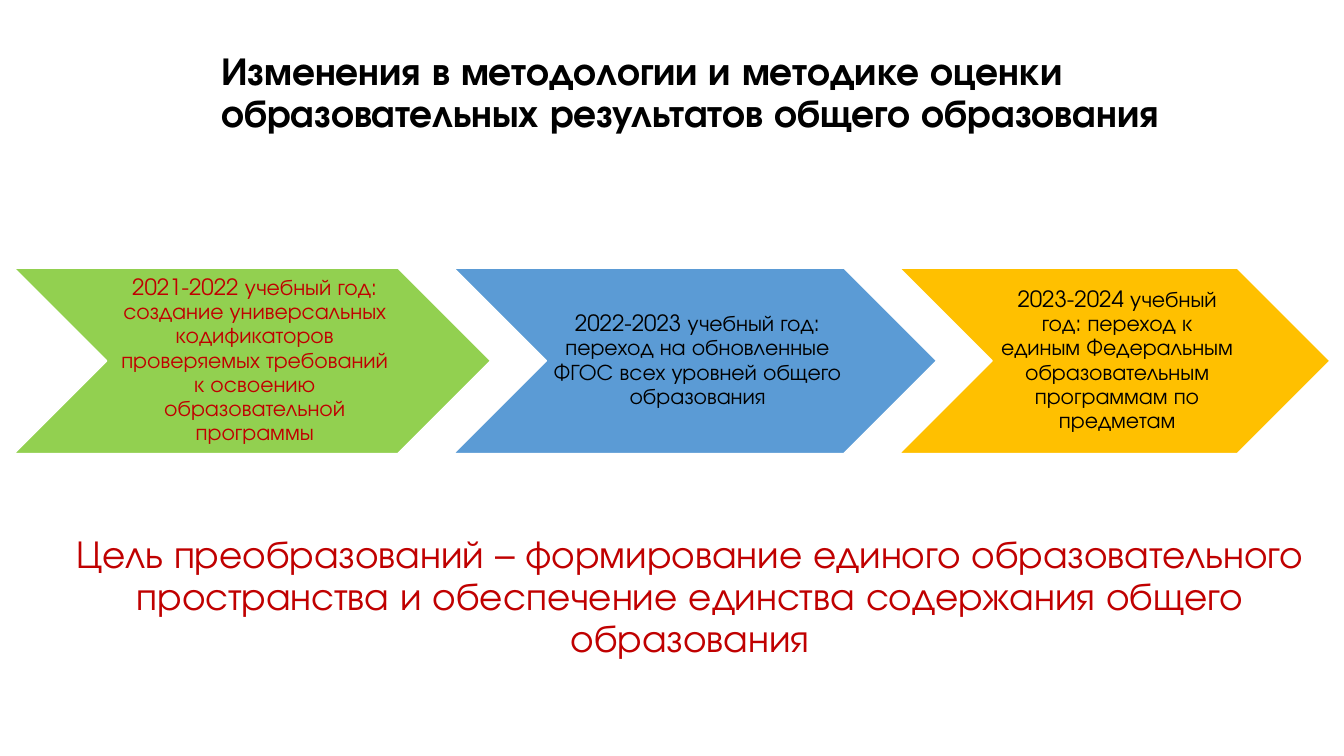
from dataclasses import dataclass

from pptx import Presentation
from pptx.dml.color import RGBColor
from pptx.enum import shapes, text
from pptx.shapes.autoshape import Shape
from pptx.slide import Slide
from pptx.text.text import TextFrame
from pptx.util import Pt


@dataclass(frozen=True)
class Theme:
    font: str = "TeX Gyre Adventor"
    heading_size: float = 28
    stage_size: float = 16
    line_spacing: float = 0.9
    black: str = "000000"
    white: str = "FFFFFF"
    red: str = "C00000"
    green: str = "92D050"
    blue: str = "5B9BD5"
    amber: str = "FFC000"


@dataclass(frozen=True)
class Stage:
    wording: str
    width: float
    fill: str
    color: str


THEME = Theme()
STAGE_LEFT, STAGE_TOP = 10, 191.5
STAGE_HEIGHT, STAGE_OVERLAP = 132.5, 26.5

TITLE = "Изменения в методологии и методике оценки образовательных результатов общего образования"
GOAL = (
    "Цель преобразований – формирование единого образовательного пространства "
    "и обеспечение единства содержания общего образования"
)
STAGES = [
    Stage(
        "2021-2022 учебный год: создание универсальных кодификаторов "
        "проверяемых требований к освоению образовательной программы",
        340.5, THEME.green, THEME.red,
    ),
    Stage(
        "2022-2023 учебный год: переход на обновленные ФГОС всех уровней общего образования",
        345, THEME.blue, THEME.black,
    ),
    Stage(
        "2023-2024 учебный год: переход к единым Федеральным образовательным программам по предметам",
        307.5, THEME.amber, THEME.black,
    ),
]


def write_text(
    frame: TextFrame,
    wording: str,
    size: float,
    color: str,
    alignment: text.PP_ALIGN = text.PP_ALIGN.CENTER,
    anchor: text.MSO_ANCHOR = text.MSO_ANCHOR.MIDDLE,
    bold: bool = False,
) -> None:
    frame.text = wording
    frame.word_wrap = True
    frame.vertical_anchor = anchor
    paragraph = frame.paragraphs[0]
    paragraph.alignment = alignment
    paragraph.line_spacing = THEME.line_spacing
    font = paragraph.runs[0].font
    font.name = THEME.font
    font.size = Pt(size)
    font.bold = bold
    font.color.rgb = RGBColor.from_string(color)


def add_text_box(slide: Slide, left: float, top: float, width: float, height: float) -> TextFrame:
    return slide.shapes.add_textbox(Pt(left), Pt(top), Pt(width), Pt(height)).text_frame


def add_stage(slide: Slide, stage: Stage, left: float) -> Shape:
    shape = slide.shapes.add_shape(
        shapes.MSO_SHAPE.CHEVRON, Pt(left), Pt(STAGE_TOP), Pt(stage.width), Pt(STAGE_HEIGHT)
    )
    shape.shadow.inherit = False
    shape.fill.solid()
    shape.fill.fore_color.rgb = RGBColor.from_string(stage.fill)
    shape.line.color.rgb = RGBColor.from_string(THEME.white)
    shape.line.width = Pt(1)
    frame = shape.text_frame
    frame.margin_left = Pt(5)
    frame.margin_top = frame.margin_right = frame.margin_bottom = Pt(1.5)
    write_text(frame, stage.wording, THEME.stage_size, stage.color)
    return shape


def main() -> None:
    presentation = Presentation()
    presentation.slide_width = Pt(960)
    presentation.slide_height = Pt(540)
    slide = presentation.slides.add_slide(presentation.slide_layouts[6])

    title = add_text_box(slide, 151, 47.5, 767, 39)
    write_text(
        title, TITLE, THEME.heading_size, THEME.black, alignment=text.PP_ALIGN.LEFT, bold=True
    )
    goal = add_text_box(slide, 37.5, 378, 911, 73.5)
    write_text(goal, GOAL, THEME.heading_size, THEME.red, anchor=text.MSO_ANCHOR.TOP)

    left = STAGE_LEFT
    for stage in STAGES:
        add_stage(slide, stage, left)
        left += stage.width - STAGE_OVERLAP

    presentation.save("out.pptx")


if __name__ == "__main__":
    main()
